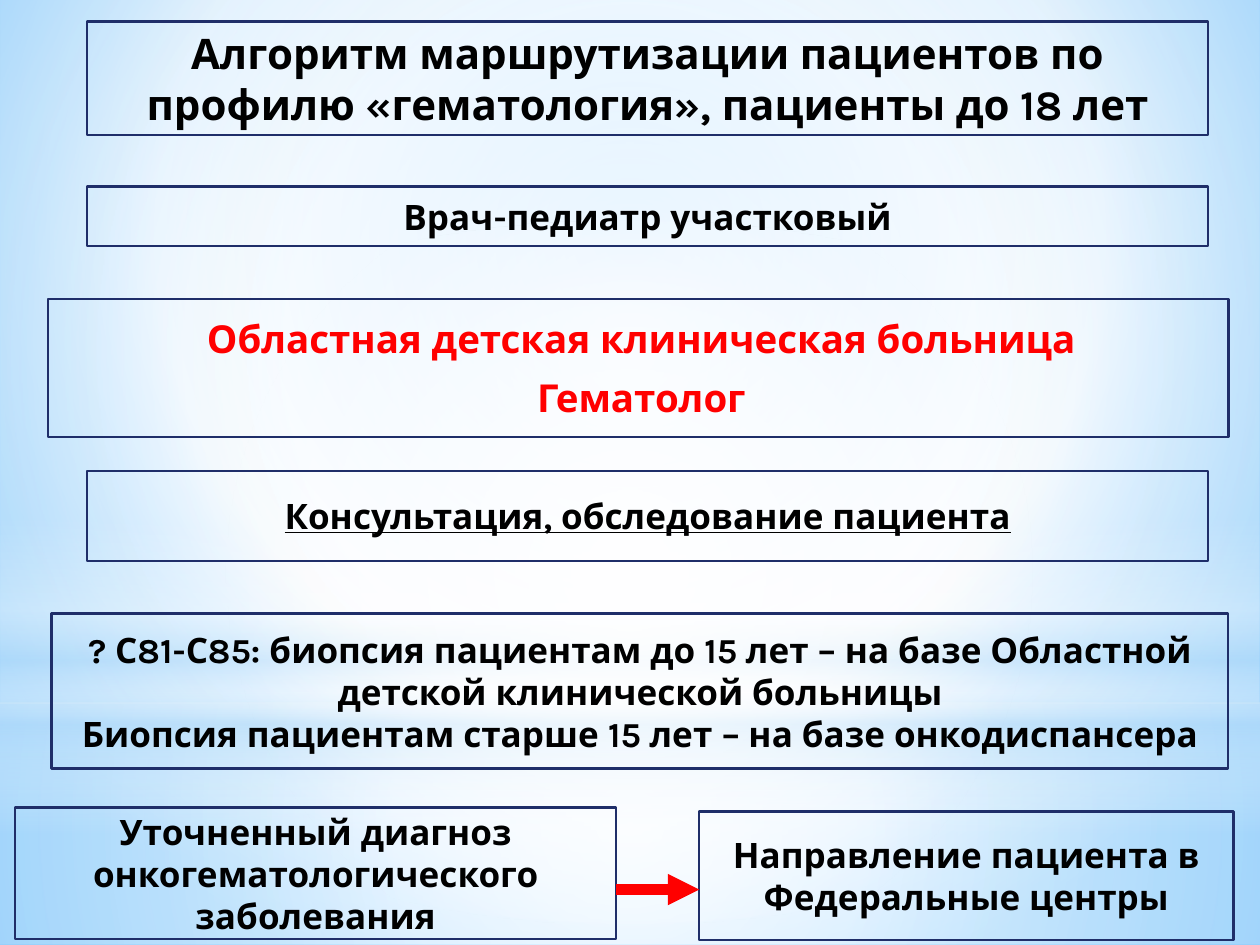
from lxml.etree import SubElement
from pptx import Presentation
from pptx.dml.color import RGBColor
from pptx.enum.shapes import MSO_CONNECTOR as Connector, MSO_SHAPE as Preset
from pptx.enum.text import MSO_ANCHOR as Anchor, MSO_AUTO_SIZE as AutoSize, PP_ALIGN as Align
from pptx.oxml.ns import qn
from pptx.util import Inches, Pt

FONT = "Karla"
NAVY = RGBColor(0x1F, 0x2E, 0x69)
BLACK = RGBColor(0, 0, 0)
RED = RGBColor(0xFF, 0, 0)
WHITE = RGBColor(0xFF, 0xFF, 0xFF)
PALE = RGBColor(0xB4, 0xDC, 0xFA)
SKY = RGBColor(0x9E, 0xD5, 0xFF)
BLUE = RGBColor(0x5B, 0xB9, 0xFF)

CENTRE = (50, 50, 50, 50)
BACKDROP = [
    (Preset.RECTANGLE, (0, 5.58, 10, 1.92),
     [(0, WHITE, 91), (37, WHITE, 76), (100, PALE, 79)], CENTRE),
    (Preset.RECTANGLE, (0, 0, 10, 5.58),
     [(0, WHITE, 89), (48, WHITE, 62), (100, PALE, 79)], CENTRE),
    (Preset.RECTANGLE, (0, 4.12, 10, 2.5),
     [(0, WHITE, 0), (29, WHITE, 30), (45, PALE, 40),
      (55, WHITE, 26), (65, PALE, 60), (100, WHITE, 0)], None),
    (Preset.OVAL, (0, 1.75, 10, 5.58),
     [(0, WHITE, 100), (56, WHITE, 0)], CENTRE),
]
STEPS = [
    ((0.69, 1.48, 8.9, 0.47), "Врач-педиатр участковый", False),
    ((0.69, 3.74, 8.9, 0.71), "Консультация, обследование пациента", True),
    ((0.41, 4.87, 9.34, 1.23),
     "? С81-С85: биопсия пациентам до 15 лет – на базе Областной детской клинической больницы\n"
     "Биопсия пациентам старше 15 лет – на базе онкодиспансера", False),
    ((0.12, 6.41, 4.77, 1.04), "Уточненный диагноз онкогематологического заболевания", False),
    ((5.55, 6.44, 4.24, 1.02), "Направление пациента в Федеральные центры", False),
]


def paint_gradient(properties, stops, focus):
    empty = properties.find(qn("a:noFill"))
    gradient = empty.makeelement(qn("a:gradFill"), {"rotWithShape": "1"})
    properties.replace(empty, gradient)
    stop_list = SubElement(gradient, qn("a:gsLst"))
    for position, color, opacity in stops:
        stop = SubElement(stop_list, qn("a:gs"), pos=str(position * 1000))
        tint = SubElement(stop, qn("a:srgbClr"), val=str(color))
        if opacity < 100:
            SubElement(tint, qn("a:alpha"), val=str(opacity * 1000))
    if focus is None:
        SubElement(gradient, qn("a:lin"), ang="5400000", scaled="0")
    else:
        shade = SubElement(gradient, qn("a:path"), attrib={"path": "circle"})
        sides = {side: str(share * 1000) for side, share in zip("ltrb", focus)}
        SubElement(shade, qn("a:fillToRect"), attrib=sides)


def add_backdrop(page):
    page.background.fill.background()
    paint_gradient(page.element.find(".//" + qn("p:bgPr")),
                   [(0, SKY, 100), (60, WHITE, 100), (100, BLUE, 100)], (20, 10, 20, 60))
    for preset, box, stops, focus in BACKDROP:
        glow = page.shapes.add_shape(preset, *map(Inches, box))
        glow.shadow.inherit = False
        glow.line.fill.background()
        glow.fill.background()
        paint_gradient(glow.element.spPr, stops, focus)


def format_panel(panel, box, text, size, color=BLACK, underline=False):
    panel.left, panel.top, panel.width, panel.height = map(Inches, box)
    panel.fill.background()
    panel.line.color.rgb = NAVY
    panel.line.width = Pt(1.25)
    frame = panel.text_frame
    frame.text = text
    frame.word_wrap = True
    frame.auto_size = AutoSize.NONE
    frame.vertical_anchor = Anchor.MIDDLE
    for para in frame.paragraphs:
        para.alignment = Align.CENTER
        for span in para.runs:
            font = span.font
            font.name, font.size, font.bold = FONT, Pt(size), True
            font.color.rgb = color
            if underline:
                font.underline = True


def add_title(page, box):
    title = page.shapes.title
    page.shapes.element.append(title.element)
    format_panel(title, box, "Алгоритм маршрутизации пациентов по профилю "
                 "«гематология», пациенты до 18 лет", 24)


def add_hospital(page, box):
    body = page.placeholders[1]
    page.shapes.element.append(body.element)
    format_panel(body, box, "Областная детская клиническая больница\nГематолог", 22, RED)
    for para in body.text_frame.paragraphs:
        para.space_after = Pt(3)
        properties = para._p.get_or_add_pPr()
        properties.set("marL", str(Inches(0.05)))
        properties.set("indent", "0")
        SubElement(properties, qn("a:buNone"))


def add_step(page, box, text, underline):
    step = page.shapes.add_shape(Preset.RECTANGLE, *map(Inches, box))
    step.shadow.inherit = False
    format_panel(step, box, text, 20, underline=underline)


def add_arrow(page, left, right, height):
    arrow = page.shapes.add_connector(
        Connector.STRAIGHT, Inches(left), Inches(height), Inches(right), Inches(height))
    arrow.line.color.rgb = RED
    arrow.line.width = Pt(6)
    SubElement(arrow.line._get_or_add_ln(), qn("a:tailEnd"), type="triangle")
    SubElement(arrow.element.spPr, qn("a:effectLst"))


def main():
    deck = Presentation()
    deck.slide_width, deck.slide_height = Inches(10), Inches(7.5)
    page = deck.slides.add_slide(deck.slide_layouts[1])
    add_backdrop(page)
    add_title(page, (0.69, 0.17, 8.9, 0.9))
    add_hospital(page, (0.38, 2.37, 9.37, 1.1))
    for box, text, underline in STEPS:
        add_step(page, box, text, underline)
    add_arrow(page, 4.89, 5.55, 7.06)
    deck.save("out.pptx")


if __name__ == "__main__":
    main()
